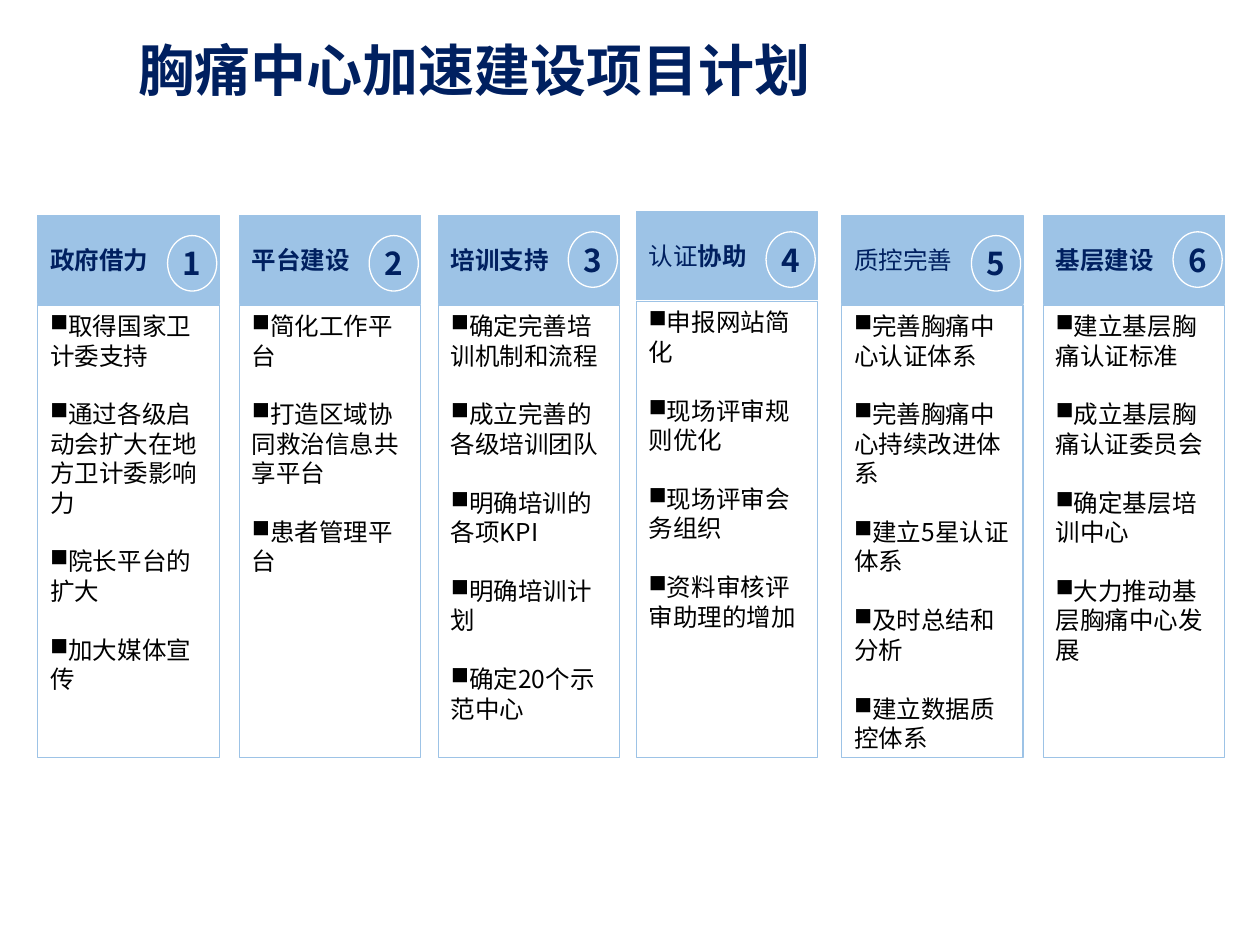
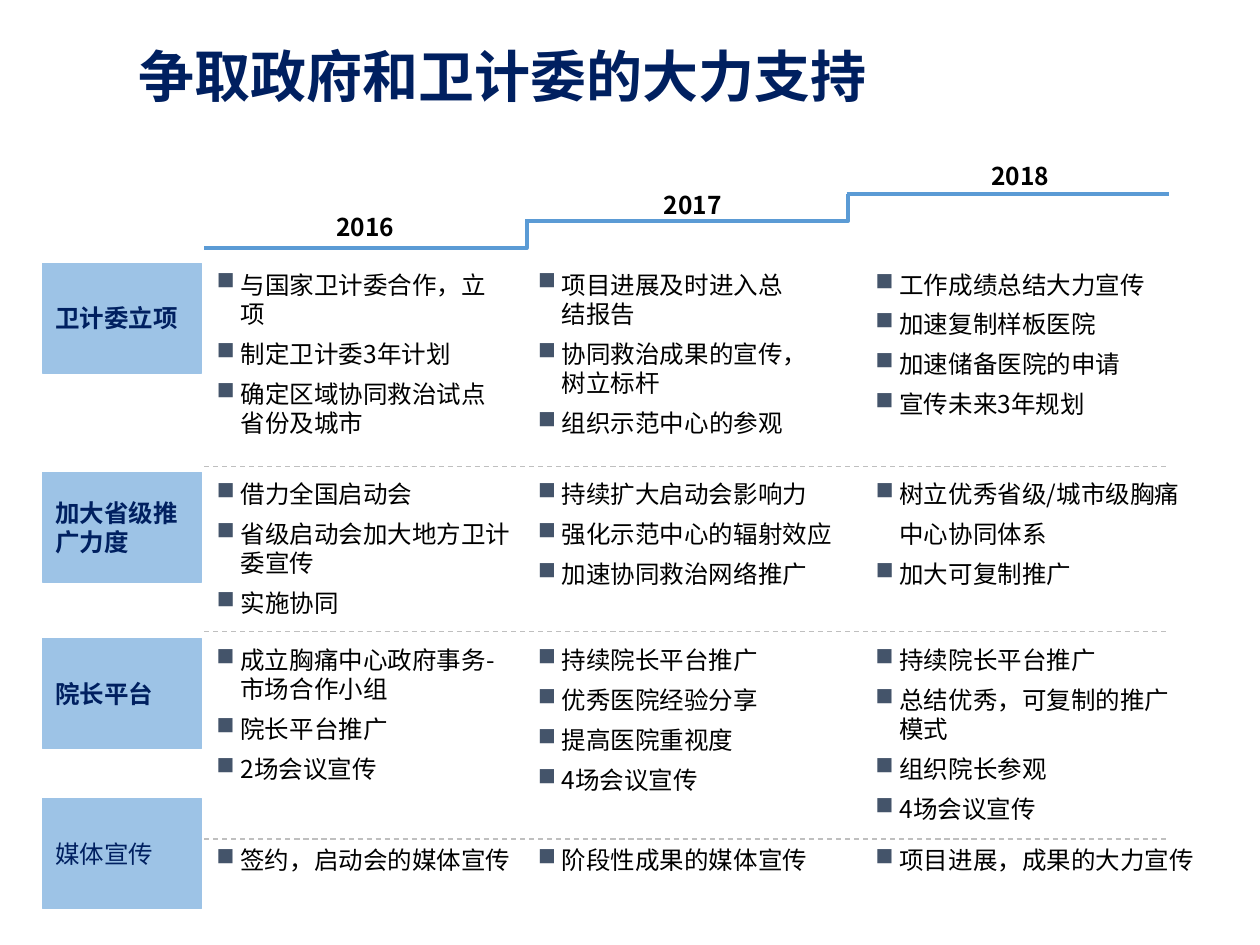
from pptx import Presentation
from pptx.dml.color import RGBColor
from pptx.enum.dml import MSO_LINE
from pptx.enum.shapes import MSO_CONNECTOR, MSO_SHAPE
from pptx.enum.text import MSO_ANCHOR, MSO_AUTO_SIZE, PP_ALIGN
from pptx.oxml.ns import qn
from pptx.util import Inches, Pt
from lxml.etree import SubElement

FONT = "Noto Sans CJK SC"
NAVY, SKY, STEP_BLUE = "002060", "9DC3E6", "5B9BD5"
BLACK, WHITE, SLATE, GREY = "000000", "FFFFFF", "44546A", "BFBFBF"
COLUMNS, ROWS = 100, 75
BODY_SIZE, LINE_PITCH = 14, 16.8


def color(hex_code):
    """Turn a hex string into a colour."""
    return RGBColor.from_string(hex_code)


class Deck:
    """Hold the presentation's style and its current slide."""

    def __init__(self):
        """Open an empty 10 by 7.5 inch presentation."""
        self.presentation = Presentation()
        self.presentation.slide_width = Inches(10)
        self.presentation.slide_height = Inches(7.5)
        self.slide = None

    def x(self, columns):
        """Convert grid columns to a length."""
        return round(self.presentation.slide_width * columns / COLUMNS)

    def y(self, rows):
        """Convert grid rows to a length."""
        return round(self.presentation.slide_height * rows / ROWS)

    def area(self, left, top, width, height):
        """Convert a grid area to lengths."""
        return self.x(left), self.y(top), self.x(width), self.y(height)

    def style(self, run, size, ink, bold=False):
        """Format one run."""
        run.font.size, run.font.bold = Pt(size), bold
        run.font.color.rgb = color(ink)
        run.font.name = FONT
        SubElement(run.font._element, qn("a:ea")).set("typeface", FONT)

    def add_slide(self, title, top, height):
        """Start a title-only slide and place its title."""
        self.slide = self.presentation.slides.add_slide(self.presentation.slide_layouts[5])
        heading = self.slide.shapes.title
        heading.left, heading.top, heading.width, heading.height = self.area(10, top, 92, height)
        frame = heading.text_frame
        frame.text = title
        frame.word_wrap, frame.auto_size = True, MSO_AUTO_SIZE.NONE
        frame.vertical_anchor = MSO_ANCHOR.MIDDLE
        paragraph = frame.paragraphs[0]
        paragraph.alignment, paragraph.line_spacing = PP_ALIGN.LEFT, 0.9
        self.style(paragraph.runs[0], 32, NAVY, True)

    def panel(self, place, fill=None, outline=SKY, preset=MSO_SHAPE.RECTANGLE):
        """Add an outlined preset shape."""
        panel = self.slide.shapes.add_shape(preset, *self.area(*place))
        panel.shadow.inherit = False
        if fill:
            panel.fill.solid()
            panel.fill.fore_color.rgb = color(fill)
        else:
            panel.fill.background()
        panel.line.color.rgb, panel.line.width = color(outline), Pt(0.75)
        panel.text_frame.word_wrap = True
        return panel

    def label(self, place, strong="", light=""):
        """Add a filled label with light words before strong ones."""
        frame = self.panel(place, SKY).text_frame
        frame.vertical_anchor = MSO_ANCHOR.MIDDLE
        paragraph = frame.paragraphs[0]
        paragraph.alignment, paragraph.line_spacing = PP_ALIGN.LEFT, Pt(LINE_PITCH)
        for words, bold in ((light, False), (strong, True)):
            if words:
                run = paragraph.add_run()
                run.text = words
                self.style(run, BODY_SIZE, NAVY, bold)

    def badge(self, left, top, number):
        """Add a numbered oval."""
        frame = self.panel((left, top, 3.9, 4.4), SKY, WHITE, MSO_SHAPE.OVAL).text_frame
        frame.margin_left = frame.margin_right = frame.margin_top = frame.margin_bottom = 0
        frame.vertical_anchor = MSO_ANCHOR.MIDDLE
        frame.text = str(number)
        frame.paragraphs[0].alignment = PP_ALIGN.CENTER
        self.style(frame.paragraphs[0].runs[0], 18, NAVY, True)

    def text_box(self, place):
        """Add a wrapping text box and return its frame."""
        frame = self.slide.shapes.add_textbox(*self.area(*place)).text_frame
        frame.word_wrap = True
        return frame

    def year(self, left, top, year):
        """Add a bold year above its step."""
        frame = self.text_box((left, top, 8.6, 3.4))
        frame.text = year
        frame.paragraphs[0].line_spacing = Pt(LINE_PITCH)
        self.style(frame.paragraphs[0].runs[0], BODY_SIZE, BLACK, True)

    def bullets(self, frame, items, gap, hang=0, marker=BLACK, unmarked=()):
        """Fill a frame with square-bulleted paragraphs."""
        frame.vertical_anchor = MSO_ANCHOR.TOP
        frame.text = "\n".join(items)
        for index, paragraph in enumerate(frame.paragraphs):
            marked = paragraph.text not in unmarked
            properties = paragraph._p.get_or_add_pPr()
            properties.set("marL", str(self.x(hang)))
            properties.set("indent", str(-self.x(hang) if marked else 0))
            if marked:
                tint = SubElement(properties, qn("a:buClr"))
                SubElement(tint, qn("a:srgbClr")).set("val", marker)
                SubElement(properties, qn("a:buChar")).set("char", "■")
            paragraph.alignment, paragraph.line_spacing = PP_ALIGN.LEFT, Pt(LINE_PITCH)
            if index:
                paragraph.space_before = Pt(gap)
            self.style(paragraph.runs[0], BODY_SIZE, BLACK)

    def step(self, points):
        """Draw an open stair outline through grid points."""
        corners = [(self.x(left), self.y(top)) for left, top in points]
        builder = self.slide.shapes.build_freeform(*corners[0])
        builder.add_line_segments(corners[1:], close=False)
        stair = builder.convert_to_shape()
        stair.shadow.inherit = False
        stair.fill.background()
        stair.line.color.rgb, stair.line.width = color(STEP_BLUE), Pt(2.25)

    def divider(self, left, right, top):
        """Draw a dashed horizontal line."""
        rule = self.slide.shapes.add_connector(
            MSO_CONNECTOR.STRAIGHT, self.x(left), self.y(top), self.x(right), self.y(top))
        SubElement(rule._element.spPr, qn("a:effectLst"))
        rule.line.color.rgb, rule.line.width = color(GREY), Pt(0.75)
        rule.line.dash_style = MSO_LINE.DASH


WORKSTREAMS = [
    (3, 17.1, 18.7, ("政府借力",),
     ["取得国家卫计委支持", "通过各级启动会扩大在地方卫计委影响力", "院长平台的扩大", "加大媒体宣传"]),
    (19, 17.1, 18.7, ("平台建设",),
     ["简化工作平台", "打造区域协同救治信息共享平台", "患者管理平台"]),
    (34.8, 17.1, 18.4, ("培训支持",),
     ["确定完善培训机制和流程", "成立完善的各级培训团队", "明确培训的各项KPI", "明确培训计划",
      "确定20个示范中心"]),
    (50.5, 16.8, 18.4, ("协助", "认证"),
     ["申报网站简化", "现场评审规则优化", "现场评审会务组织", "资料审核评审助理的增加"]),
    (66.8, 17.1, 18.7, ("", "质控完善"),
     ["完善胸痛中心认证体系", "完善胸痛中心持续改进体系", "建立5星认证体系", "及时总结和分析",
      "建立数据质控体系"]),
    (82.8, 17.1, 18.4, ("基层建设",),
     ["建立基层胸痛认证标准", "成立基层胸痛认证委员会", "确定基层培训中心", "大力推动基层胸痛中心发展"]),
]

YEARS = [("2016", 16.3), ("2017", 14.6), ("2018", 12.3)]
YEAR_LEFTS = (16.2, 41.7, 68.5)
CONTINUATION = "中心协同体系"
INITIATIVES = [
    (20.9, 20.9, ("卫计委立项",), (23.9, 22.8, 25.6), [
        ["与国家卫计委合作，立项", "制定卫计委3年计划", "确定区域协同救治试点省份及城市"],
        ["项目进展及时进入总结报告", "协同救治成果的宣传，树立标杆", "组织示范中心的参观"],
        ["工作成绩总结大力宣传", "加速复制样板医院", "加速储备医院的申请", "宣传未来3年规划"]]),
    (37.5, 37.5, ("加大省级推广力度",), (27.1, 25.6, 26.5), [
        ["借力全国启动会", "省级启动会加大地方卫计委宣传", "实施协同"],
        ["持续扩大启动会影响力", "强化示范中心的辐射效应", "加速协同救治网络推广"],
        ["树立优秀省级/城市级胸痛", CONTINUATION, "加大可复制推广"]]),
    (50.7, 50.7, ("院长平台",), (25.6, 25.6, 25.6), [
        ["成立胸痛中心政府事务-市场合作小组", "院长平台推广", "2场会议宣传"],
        ["持续院长平台推广", "优秀医院经验分享", "提高医院重视度", "4场会议宣传"],
        ["持续院长平台推广", "总结优秀，可复制的推广模式", "组织院长参观", "4场会议宣传"]]),
    (63.4, 66.6, ("", "媒体宣传"), (25.6, 25.6, 29.4), [
        ["签约，启动会的媒体宣传"], ["阶段性成果的媒体宣传"], ["项目进展，成果的大力宣传"]]),
]


def build_workstreams(deck):
    """Build the slide with six workstream columns."""
    deck.add_slide("胸痛中心加速建设项目计划", 3, 5.6)
    width, header_height, bottom = 14.4, 7, 60.1
    for number, (left, top, badge_top, heading, tasks) in enumerate(WORKSTREAMS, 1):
        body_top = top + header_height + 0.1
        body = deck.panel((left, body_top, width, bottom - body_top))
        deck.bullets(body.text_frame, tasks, LINE_PITCH)
        deck.label((left, top, width, header_height), *heading)
        deck.badge(left + 10.3, badge_top, number)


def build_roadmap(deck):
    """Build the slide with three years of initiatives."""
    deck.add_slide("争取政府和卫计委的大力支持", 1.4, 9.8)
    first, run_length, base, rise = 16.2, 25.5, 19.7, 2.15
    for index, (year, year_top) in enumerate(YEARS):
        left, top = first + run_length * index, base - rise * index
        right = left + run_length + 0.1
        corners = [(left, top), (right, top)]
        if index < len(YEARS) - 1:
            corners.append((right, top - rise))
        deck.step(corners)
        deck.year(25.7 + 26 * index, year_top, year)
    for label_top, text_top, heading, widths, plans in INITIATIVES:
        deck.label((3.4, label_top, 12.6, 8.7), *heading)
        for left, width, actions in zip(YEAR_LEFTS, widths, plans):
            height = 1 + 3.2 * len(actions)
            frame = deck.text_box((left, text_top, width, height))
            deck.bullets(frame, actions, 6, 1.9, SLATE, (CONTINUATION,))
    for top in (37, 50.1, 66.6):
        deck.divider(first, 92.8, top)


def main():
    """Build both slides and save them."""
    deck = Deck()
    build_workstreams(deck)
    build_roadmap(deck)
    deck.presentation.save("out.pptx")


if __name__ == "__main__":
    main()
